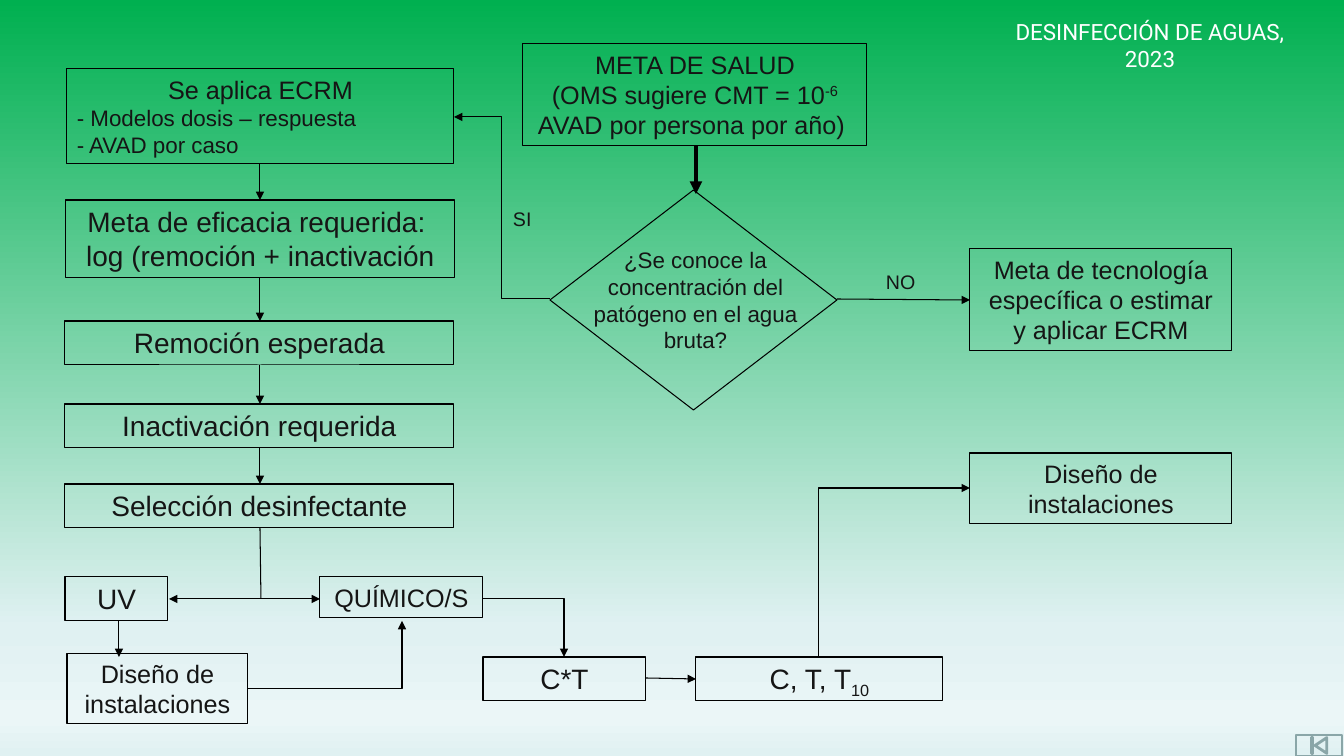
from lxml.etree import SubElement
from pptx import Presentation
from pptx.dml.color import RGBColor
from pptx.enum.shapes import MSO_CONNECTOR as Connector, MSO_SHAPE as Shape
from pptx.enum.text import MSO_ANCHOR as Anchor, PP_ALIGN as Align
from pptx.oxml.ns import qn
from pptx.util import Pt

EMU_PER_PX = 914400 / 100.8
BLACK = RGBColor(0x00, 0x00, 0x00)
INK = RGBColor(0x15, 0x15, 0x15)
WHITE = RGBColor(0xFF, 0xFF, 0xFF)
GRAY = RGBColor(0x8A, 0xA6, 0xA8)
GREEN = RGBColor(0x00, 0xB0, 0x50)
PALE = RGBColor(0xE0, 0xF1, 0xF2)
PALEST = RGBColor(0xEB, 0xF6, 0xF7)
BACKGROUND_STOPS = [(0, GREEN), (83, PALE), (95, PALEST), (100, PALE)]
THIN = 0.75

COLUMN_LEFT, COLUMN_WIDTH, COLUMN_CENTER = 65, 389, 260
ROW_HEIGHT = 44
RIGHT_LEFT, RIGHT_WIDTH = 970, 262
DESIGN_HEIGHT = 71


def px(*lengths):
    return [round(length * EMU_PER_PX) for length in lengths]


def paint_background(slide):
    fill = slide.background.fill
    fill.gradient()
    fill.gradient_angle = 270
    stops = slide.element.find(".//" + qn("a:gsLst"))
    for stop in list(stops):
        stops.remove(stop)
    for percent, color in BACKGROUND_STOPS:
        stop = SubElement(stops, qn("a:gs"), pos=str(percent * 1000))
        SubElement(stop, qn("a:srgbClr"), val=str(color))


def write(shape, paragraphs, size, color=INK, font="Arial", align=Align.CENTER):
    """Each paragraph is a string or a list of (text, size, baseline percent) runs."""
    frame = shape.text_frame
    frame.word_wrap = True
    frame.vertical_anchor = Anchor.TOP
    for index, content in enumerate(paragraphs):
        paragraph = frame.add_paragraph() if index else frame.paragraphs[0]
        paragraph.alignment = align
        runs = [(content, size, 0)] if isinstance(content, str) else content
        for text, run_size, baseline in runs:
            run = paragraph.add_run()
            run.text = text
            run.font.size = Pt(run_size)
            run.font.name = font
            run.font.color.rgb = color
            if baseline:
                run._r.get_or_add_rPr().set("baseline", str(baseline * 1000))


def add_outline(slide, kind, bounds, color=BLACK, width=THIN):
    shape = slide.shapes.add_shape(kind, *px(*bounds))
    shape.shadow.inherit = False
    shape.fill.background()
    shape.line.color.rgb = color
    shape.line.width = Pt(width)
    return shape


def add_box(slide, bounds, paragraphs, size):
    shape = add_outline(slide, Shape.RECTANGLE, bounds)
    write(shape, paragraphs, size)
    return shape


def add_label(slide, bounds, text, size, **style):
    write(slide.shapes.add_textbox(*px(*bounds)), [text], size, **style)


def add_line(slide, points, kind=Connector.STRAIGHT, width=THIN, head=False, tail=True):
    connector = slide.shapes.add_connector(kind, *px(*points))
    connector.line.color.rgb = BLACK
    connector.line.width = Pt(width)
    properties = connector.element.spPr
    line = properties.find(qn("a:ln"))
    for wanted, tag in ((head, "a:headEnd"), (tail, "a:tailEnd")):
        if wanted:
            SubElement(line, qn(tag), type="triangle")
    SubElement(properties, qn("a:effectLst"))
    return connector


def add_corner(slide, points, **ends):
    """Connector with one bend, leaving its start horizontally."""
    connector = add_line(slide, points, Connector.ELBOW, **ends)
    connector.element.spPr.find(qn("a:prstGeom")).set("prst", "bentConnector2")


def add_goal_and_decision(slide):
    add_box(slide, (523, 44, 344, 102), [
        "META DE SALUD",
        [("(OMS sugiere CMT = 10", 18, 0), ("-6", 18, 30), (" ", 6, 0),
         ("AVAD por persona por año) ", 18, 0)],
    ], 18)
    add_label(slide, (552, 241, 287, 119),
              "¿Se conoce la concentración del patógeno en el agua bruta?", 16)
    add_outline(slide, Shape.DIAMOND, (550, 190, 287, 220))
    add_label(slide, (503, 202, 64, 34), "SI", 14, align=Align.LEFT)
    add_label(slide, (876, 265, 64, 34), "NO", 14, align=Align.LEFT)
    add_box(slide, (RIGHT_LEFT, 249, RIGHT_WIDTH, 102),
            ["Meta de tecnología específica o estimar y aplicar ECRM"], 18)
    add_line(slide, (696, 146, 696, 194), width=3)
    add_line(slide, (837, 299, 970, 300))
    add_line(slide, (550, 299, 454, 117), Connector.ELBOW)


def add_main_column(slide):
    risk = add_box(slide, (67, 69, 387, 95), [
        [("Se aplica ECRM", 18, 0)],
        "- Modelos dosis – respuesta",
        "- AVAD por caso",
    ], 16)
    for paragraph in risk.text_frame.paragraphs[1:]:
        paragraph.alignment = Align.LEFT
    add_box(slide, (66, 200, COLUMN_WIDTH, 78),
            ["Meta de eficacia requerida: ", "log (remoción + inactivación"], 20)
    for top, text in ((321, "Remoción esperada"), (404, "Inactivación requerida"),
                      (484, "Selección desinfectante")):
        add_box(slide, (COLUMN_LEFT, top, COLUMN_WIDTH, ROW_HEIGHT), [text], 20)
    for start, end in ((164, 200), (278, 321), (365, 404), (448, 484)):
        add_line(slide, (COLUMN_CENTER, start, COLUMN_CENTER, end))


def add_disinfectants(slide):
    design = ["Diseño de instalaciones"]
    add_box(slide, (COLUMN_LEFT, 577, 103, ROW_HEIGHT), ["UV"], 20)
    add_box(slide, (320, 577, 163, 41), ["QUÍMICO/S"], 18)
    add_box(slide, (67, 653, 181, DESIGN_HEIGHT), design, 18)
    add_box(slide, (483, 657, 163, ROW_HEIGHT), ["C*T"], 20)
    add_box(slide, (696, 657, 247, ROW_HEIGHT),
            [[("C, T, T", 20, 0), ("10", 20, -25)]], 20)
    add_box(slide, (RIGHT_LEFT, 453, RIGHT_WIDTH, DESIGN_HEIGHT), design, 18)
    add_line(slide, (COLUMN_CENTER, 528, 261, 599), tail=False)
    add_line(slide, (169, 599, 320, 599), head=True)
    add_line(slide, (119, 621, 119, 657))
    add_line(slide, (646, 678, 696, 679))
    add_corner(slide, (483, 599, 564, 657))
    add_corner(slide, (248, 689, 402, 621))
    add_corner(slide, (RIGHT_LEFT, 488, 819, 657), head=True, tail=False)


def main():
    presentation = Presentation()
    presentation.slide_width, presentation.slide_height = px(1344, 756)
    slide = presentation.slides.add_slide(presentation.slide_layouts[6])
    paint_background(slide)
    add_outline(slide, Shape.ACTION_BUTTON_BEGINNING, (1296, 735, 46, 21), GRAY, 2)
    add_label(slide, (990, 13, 320, 37), "DESINFECCIÓN DE AGUAS, 2023", 16,
              color=WHITE, font="Roboto")
    add_goal_and_decision(slide)
    add_main_column(slide)
    add_disinfectants(slide)
    presentation.save("out.pptx")


if __name__ == "__main__":
    main()
